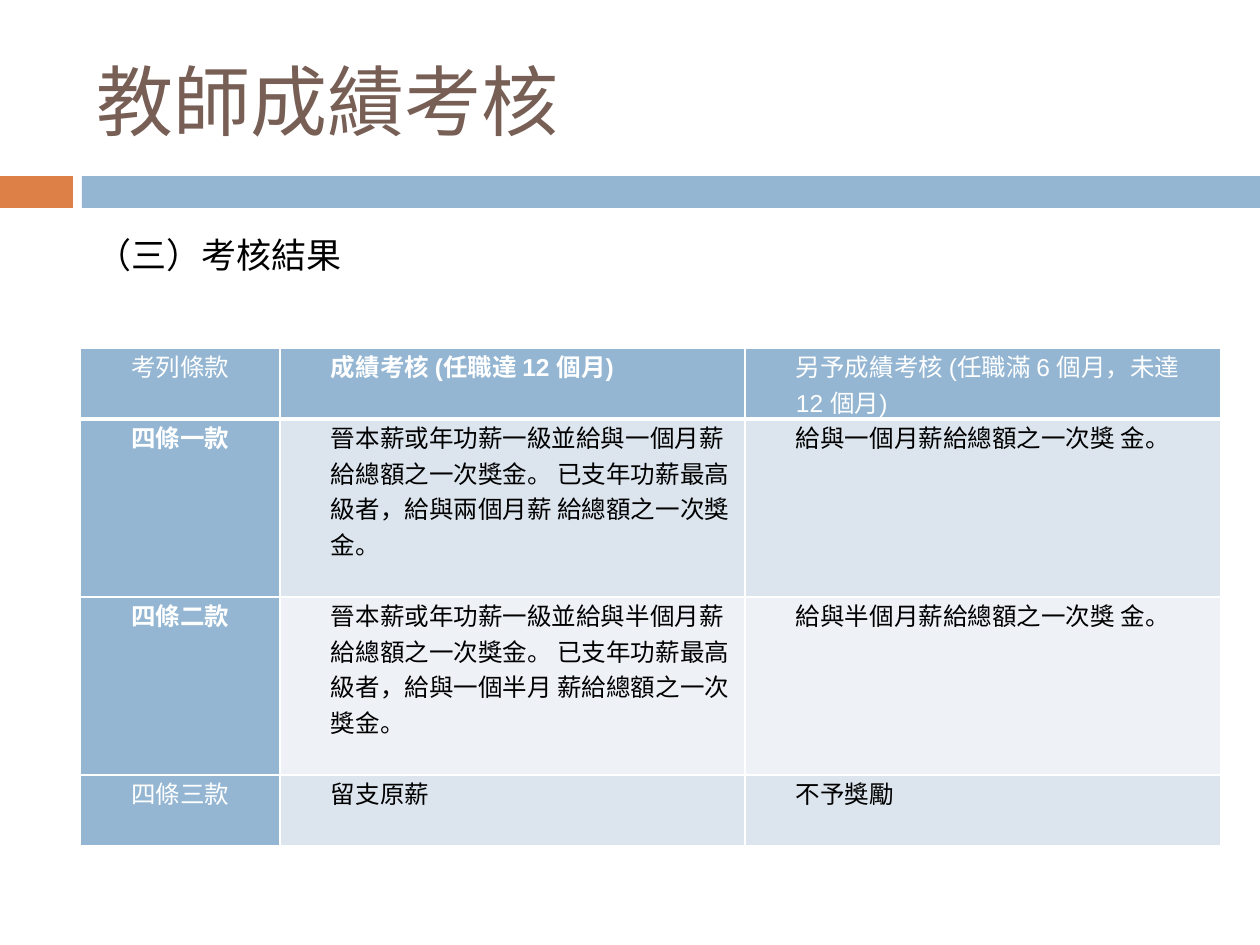
from lxml.etree import SubElement
from pptx import Presentation
from pptx.dml.color import RGBColor
from pptx.enum.shapes import MSO_SHAPE
from pptx.enum.text import MSO_ANCHOR, PP_ALIGN
from pptx.oxml.ns import qn
from pptx.util import Emu, Pt

COLORS = {
    "orange": "DD8047", "blue": "94B6D2", "brown": "775F55",
    "band": "DCE5EE", "pale": "EEF2F7", "white": "FFFFFF", "black": "000000",
}


def px(length):
    return Emu(round(length * 914400 / 126))


def write(frame, text, color, **font_values):
    para = frame.paragraphs[0]
    para.alignment = PP_ALIGN.LEFT
    span = para.add_run()
    span.text = text
    span.font.color.rgb = RGBColor.from_string(COLORS[color])
    for name, value in font_values.items():
        setattr(span.font, name, value)
    return para


deck = Presentation()
deck.slide_width, deck.slide_height = px(1260), px(945)
page = deck.slides.add_slide(deck.slide_layouts[5])

# Bars under the title
for left, width, color in [(0, 73, "orange"), (82, 1178, "blue")]:
    bar = page.shapes.add_shape(MSO_SHAPE.RECTANGLE, px(left), px(176), px(width), px(32))
    bar.shadow.inherit = False
    bar.fill.solid()
    bar.fill.fore_color.rgb = RGBColor.from_string(COLORS[color])
    bar.line.fill.background()

# Title
title = page.shapes.title
title.left, title.top, title.width, title.height = px(84), px(32), px(1124), px(136)
title.text_frame.vertical_anchor = MSO_ANCHOR.MIDDLE
write(title.text_frame, "教師成績考核", "brown", size=Pt(44), name="Cambria")

# Section heading
box = page.shapes.add_textbox(px(84), px(227), px(1124), px(620))
box.text_frame.word_wrap = True
write(box.text_frame, "（三）考核結果", "black", size=Pt(20), name="Calibri")

# Results table
rows = [
    ("考列條款", "成績考核 (任職達 12 個月)", "另予成績考核 (任職滿 6 個月，未達 12 個月)"),
    ("四條一款",
     "晉本薪或年功薪一級並給與一個月薪 給總額之一次獎金。 已支年功薪最高級者，給與兩個月薪 給總額之一次獎金。",
     "給與一個月薪給總額之一次獎 金。"),
    ("四條二款",
     "晉本薪或年功薪一級並給與半個月薪 給總額之一次獎金。 已支年功薪最高級者，給與一個半月 薪給總額之一次獎金。",
     "給與半個月薪給總額之一次獎 金。"),
    ("四條三款", "留支原薪", "不予獎勵"),
]
column_widths = [200, 465, 476]
row_heights = [71, 178, 178, 71]
bold_cells = {(0, 1), (1, 0), (2, 0)}
cell_format = {"margin_left": px(9), "margin_right": px(9), "margin_top": 0, "margin_bottom": 0}

table = page.shapes.add_table(len(rows), len(column_widths), px(80), px(348),
                              px(sum(column_widths)), px(sum(row_heights))).table
for column, width in zip(table.columns, column_widths):
    column.width = px(width)
for row, height in zip(table.rows, row_heights):
    row.height = px(height)

for r, texts in enumerate(rows):
    for c, text in enumerate(texts):
        cell = table.cell(r, c)
        for name, value in cell_format.items():
            setattr(cell, name, value)
        is_header = r == 0 or c == 0
        para = write(cell.text_frame, text, "white" if is_header else "black",
                     size=Pt(14), name="Arial", bold=(r, c) in bold_cells)
        para._p.get_or_add_pPr().set("marL", str(px(42)))

        # White borders, thicker under the header row; they precede the fill
        properties = cell._tc.get_or_add_tcPr()
        for side in ("lnL", "lnR", "lnT", "lnB"):
            thick = (r, side) in {(0, "lnB"), (1, "lnT")}
            line = SubElement(properties, qn(f"a:{side}"), w=str(Pt(3 if thick else 1)))
            paint = SubElement(line, qn("a:solidFill"))
            SubElement(paint, qn("a:srgbClr"), val=COLORS["white"])
        fill_name = "blue" if is_header else "band" if r % 2 else "pale"
        cell.fill.solid()
        cell.fill.fore_color.rgb = RGBColor.from_string(COLORS[fill_name])

deck.save("out.pptx")
